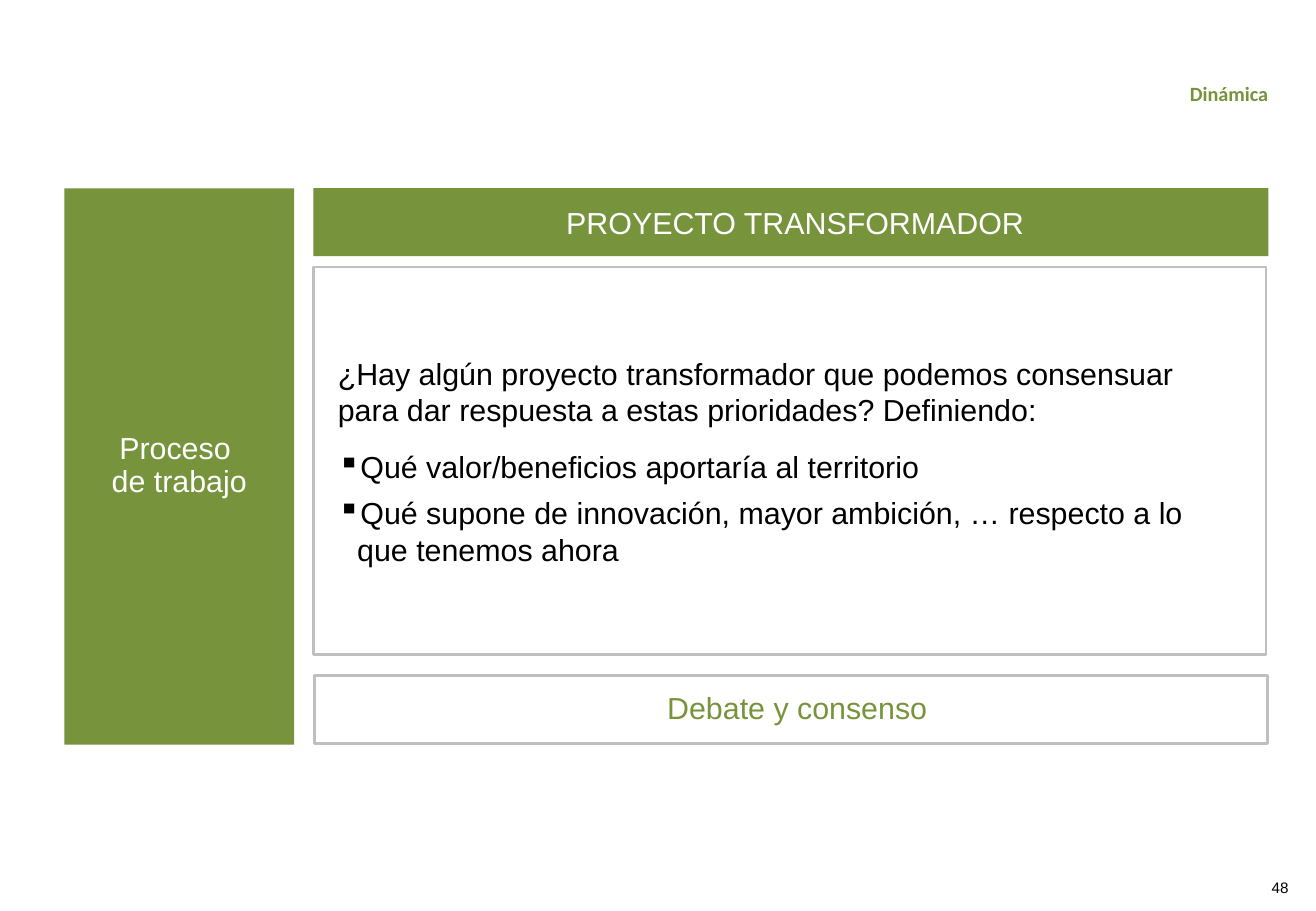
import pptx
import pptx.util
import pptx.dml.color
import pptx.enum.shapes
import pptx.enum.text
import lxml.etree
from pptx.util import Inches

COLORS = {"green": "77933C", "gray": "BFBFBF", "white": "FFFFFF", "black": "000000"}
ALIGN = pptx.enum.text.PP_ALIGN


def color(name):
    return pptx.dml.color.RGBColor.from_string(COLORS[name])


def write(box, lines, font, margins=(0.1, 0.05, 0.1, 0.05)):
    """Fill a box with (text, paragraph format, bullet) lines in one font."""
    frame = box.text_frame
    frame.word_wrap = True
    frame.vertical_anchor = pptx.enum.text.MSO_ANCHOR.MIDDLE
    for side, margin in zip(("left", "top", "right", "bottom"), margins):
        setattr(frame, "margin_" + side, Inches(margin))
    for index, (text, layout, bullet) in enumerate(lines):
        para = frame.paragraphs[0] if index == 0 else frame.add_paragraph()
        for key, value in layout.items():
            setattr(para, key, value)
        if bullet:
            properties = para._p.get_or_add_pPr()
            properties.set("marL", str(Inches(0.16)))
            properties.set("indent", str(-Inches(0.16)))
            mark = lxml.etree.SubElement(properties, pptx.oxml.ns.qn("a:buChar"))
            mark.set("char", bullet)
        span = para.add_run()
        span.text = text
        for key, value in font.items():
            if key == "color":
                span.font.color.rgb = color(value)
            else:
                setattr(span.font, key, value)


deck = pptx.Presentation()
deck.slide_width, deck.slide_height = Inches(10.83), Inches(7.5)
slide = deck.slides.add_slide(deck.slide_layouts[6])

# Paragraph formats
centered = {"alignment": ALIGN.CENTER}
tight = {"alignment": ALIGN.CENTER, "line_spacing": 0.9}
intro = {"alignment": ALIGN.LEFT, "space_after": pptx.util.Pt(12)}
item = {"alignment": ALIGN.LEFT, "space_after": pptx.util.Pt(6)}

# Panels: place, fill, line, text colour, margins, lines
plain = (0.1, 0.05, 0.1, 0.05)
panels = [
    ((2.58, 2.2, 7.84, 3.19), None, "gray", "black", (0.2, 0.12, 0.2, 0.12), [
        ("¿Hay algún proyecto transformador que podemos consensuar para dar "
         "respuesta a estas prioridades? Definiendo:", intro, None),
        ("Qué valor/beneficios aportaría al territorio", item, "▪"),
        ("Qué supone de innovación, mayor ambición, … respecto a lo que "
         "tenemos ahora", item, "▪")]),
    ((0.53, 1.55, 1.89, 4.58), "green", None, "white", plain, [
        ("Proceso ", tight, None), ("de trabajo", tight, None)]),
    ((2.58, 1.55, 7.86, 0.56), "green", None, "white", plain, [
        (" PROYECTO TRANSFORMADOR", centered, None)]),
    ((2.59, 5.56, 7.84, 0.56), None, "gray", "green", (0.2, 0.12, 0.1, 0.12), [
        ("Debate y consenso", {**tight, "space_after": pptx.util.Pt(12)}, None)]),
]
for place, fill, line, text_color, margins, lines in panels:
    panel = slide.shapes.add_shape(
        pptx.enum.shapes.MSO_SHAPE.RECTANGLE, *map(Inches, place))
    panel.shadow.inherit = False
    if fill:
        panel.fill.solid()
        panel.fill.fore_color.rgb = color(fill)
    else:
        panel.fill.background()
    if line:
        panel.line.color.rgb = color(line)
        panel.line.width = pptx.util.Pt(1.5)
    else:
        panel.line.fill.background()
    font = {"name": "Arial", "size": pptx.util.Pt(18), "color": text_color}
    write(panel, lines, font, margins)

# Section label and page number
labels = [
    ((9.59, 0.65, 1.05, 0.27), "Dinámica", {**centered, "line_spacing": 0.85},
     {"name": "Calibri", "size": pptx.util.Pt(12), "bold": True, "color": "green"}),
    ((10.3, 7.21, 0.47, 0.19), "48", centered,
     {"name": "Arial", "size": pptx.util.Pt(9), "color": "black"}),
]
for place, text, layout, font in labels:
    label = slide.shapes.add_textbox(*map(Inches, place))
    write(label, [(text, layout, None)], font)

deck.save("out.pptx")
